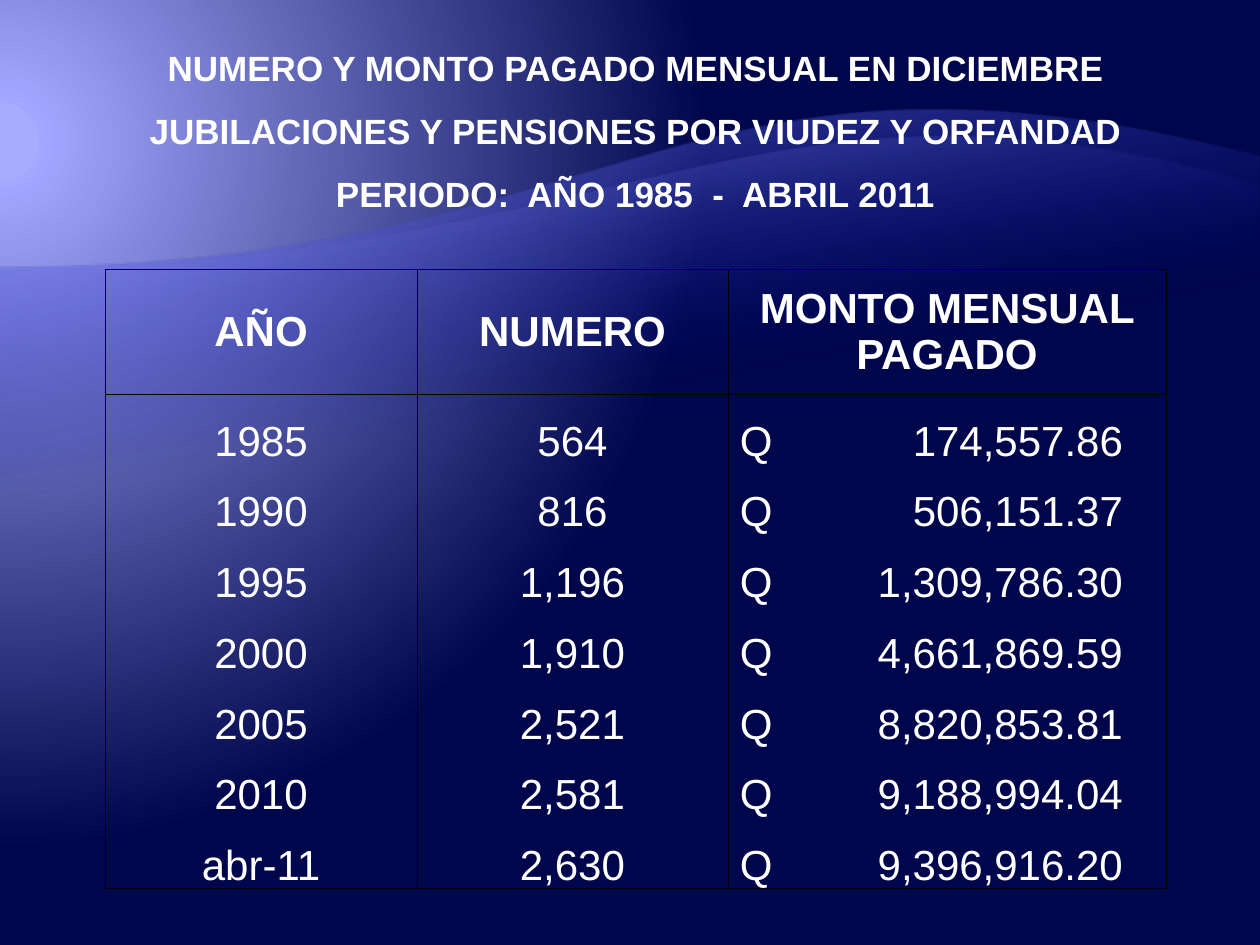
import dataclasses
import itertools
import typing

import lxml.etree
import pptx
import pptx.dml.color
import pptx.enum.text
import pptx.oxml
import pptx.oxml.ns
import pptx.util

PX = 914400 / 126
WIDTH, HEIGHT = 1260, 945
NO_STYLE = "{2D5ABB26-0587-4C30-8999-92F81FD0307C}"
ANCHOR = pptx.enum.text.MSO_ANCHOR
ALIGN = pptx.enum.text.PP_ALIGN
qn = pptx.oxml.ns.qn


@dataclasses.dataclass(frozen=True)
class Stop:
    position: int
    color: str
    alpha: int = 100


@dataclasses.dataclass(frozen=True)
class Wave:
    bottom: int
    left_y: int
    right_y: int
    control: tuple[int, int]
    stops: tuple[Stop, ...]


@dataclasses.dataclass(frozen=True)
class CellFormat:
    size: int
    bold: bool
    anchor: typing.Any = ANCHOR.BOTTOM
    align: typing.Any = ALIGN.CENTER
    inset: int = 1


TITLE = CellFormat(20, True)
HEADER = CellFormat(24, True, ANCHOR.MIDDLE)
FIGURE = CellFormat(24, False)
AMOUNT = CellFormat(24, False, align=ALIGN.LEFT, inset=12)
AMOUNT_TAB = 383

WAVES = (
    Wave(924, 268, 157, (673, 6), (Stop(65, "000D9E", 0), Stop(100, "797FFF", 55))),
    Wave(803, 268, 185, (753, 39), (Stop(65, "000D9E", 0), Stop(100, "A3A7FF", 30))),
)
TITLES = (
    "NUMERO Y MONTO PAGADO MENSUAL EN DICIEMBRE",
    "JUBILACIONES Y PENSIONES POR VIUDEZ Y ORFANDAD",
    "PERIODO:  AÑO 1985  -  ABRIL 2011",
)
HEADERS = ("AÑO", "NUMERO", "MONTO MENSUAL PAGADO")
PAYMENTS = (
    ("1985", "564", "174,557.86"),
    ("1990", "816", "506,151.37"),
    ("1995", "1,196", "1,309,786.30"),
    ("2000", "1,910", "4,661,869.59"),
    ("2005", "2,521", "8,820,853.81"),
    ("2010", "2,581", "9,188,994.04"),
    ("abr-11", "2,630", "9,396,916.20"),
)
COLUMNS = (312, 311, 438)
SPACER_ROW = len(TITLES)
HEADER_ROW = SPACER_ROW + 1
FIRST_ROW = HEADER_ROW + 1
LAST_ROW = HEADER_ROW + len(PAYMENTS)
PAYMENTS_HEIGHT = 495


def emu(px: int) -> int:
    return round(px * PX)


def rgb(color: str) -> pptx.dml.color.RGBColor:
    return pptx.dml.color.RGBColor.from_string(color)


def apply(target: typing.Any, values: dict[str, typing.Any]) -> None:
    for name, value in values.items():
        setattr(target, name, value)


def gradient(stops: tuple[Stop, ...], direction: str) -> typing.Any:
    stop_xml = "".join(
        f'<a:gs pos="{s.position * 1000}"><a:srgbClr val="{s.color}">'
        f'<a:alpha val="{s.alpha * 1000}"/></a:srgbClr></a:gs>'
        for s in stops
    )
    return pptx.oxml.parse_xml(
        f'<a:gradFill {pptx.oxml.ns.nsdecls("a")} rotWithShape="1">'
        f"<a:gsLst>{stop_xml}</a:gsLst>{direction}</a:gradFill>"
    )


def replace_fill(properties: typing.Any, fill: typing.Any) -> None:
    solid = properties.find(qn("a:solidFill"))
    properties.replace(solid, fill)


def paint_background(slide: typing.Any) -> None:
    slide.background.fill.solid()
    stops = (Stop(5, "A8ACFF"), Stop(5, "A3A7FF"), Stop(90, "00064B"))
    focus = (
        '<a:path path="circle">'
        '<a:fillToRect l="20000" t="30000" r="135000" b="100000"/></a:path>'
    )
    replace_fill(next(slide.element.iter(qn("p:bgPr"))), gradient(stops, focus))


def draw_wave(slide: typing.Any, wave: Wave) -> None:
    builder = slide.shapes.build_freeform(WIDTH, wave.bottom, scale=PX)
    builder.add_line_segments(
        [(0, wave.bottom), (0, wave.left_y), (WIDTH, wave.right_y)], close=True
    )
    shape = builder.convert_to_shape()
    shape.shadow.inherit = False
    shape.line.fill.background()
    shape.fill.solid()
    properties = shape.element.spPr
    crest = list(properties.iter(qn("a:lnTo")))[-1]
    curve = lxml.etree.Element(qn("a:cubicBezTo"))
    for x, y in ((WIDTH // 2, wave.left_y), wave.control, (WIDTH, wave.right_y)):
        lxml.etree.SubElement(
            curve, qn("a:pt"), x=str(x), y=str(y - wave.right_y)
        )
    crest.getparent().replace(crest, curve)
    replace_fill(properties, gradient(wave.stops, '<a:lin ang="15600000" scaled="0"/>'))


def border_cell(cell: typing.Any, sides: str) -> None:
    properties = cell._tc.get_or_add_tcPr()
    for index, side in enumerate("LRTB"):
        line = lxml.etree.Element(qn(f"a:ln{side}"), w=str(pptx.util.Pt(0.5)))
        if side in sides:
            fill = lxml.etree.SubElement(line, qn("a:solidFill"))
            lxml.etree.SubElement(fill, qn("a:srgbClr"), val="000000")
        else:
            lxml.etree.SubElement(line, qn("a:noFill"))
        properties.insert(index, line)


def row_sides(row: int) -> str:
    if row < SPACER_ROW:
        return ""
    if row == SPACER_ROW:
        return "B"
    top = "T" if row in (HEADER_ROW, FIRST_ROW) else ""
    bottom = "B" if row in (HEADER_ROW, LAST_ROW) else ""
    return "LR" + top + bottom


def write_cell(cell: typing.Any, text: str, style: CellFormat) -> None:
    apply(cell, {
        "margin_left": emu(style.inset), "margin_right": emu(1),
        "margin_top": emu(1), "margin_bottom": 0, "vertical_anchor": style.anchor,
    })
    paragraph = cell.text_frame.paragraphs[0]
    paragraph.alignment = style.align
    run = paragraph.add_run()
    run.text = text
    apply(run.font, {
        "name": "Arial", "size": pptx.util.Pt(style.size), "bold": style.bold,
    })
    run.font.color.rgb = rgb("FFFFFF")
    if style is AMOUNT:
        tabs = lxml.etree.SubElement(paragraph._p.get_or_add_pPr(), qn("a:tabLst"))
        lxml.etree.SubElement(tabs, qn("a:tab"), pos=str(emu(AMOUNT_TAB)), algn="r")


def add_payments_table(slide: typing.Any) -> None:
    count = len(PAYMENTS)
    edges = [round(PAYMENTS_HEIGHT * i / count) for i in range(count + 1)]
    heights = [63] * len(TITLES) + [54, 125]
    heights += [low - high for high, low in itertools.pairwise(edges)]
    frame = slide.shapes.add_table(
        len(heights), len(COLUMNS),
        emu(105), emu(26), emu(sum(COLUMNS)), emu(sum(heights)),
    )
    table = frame.table
    apply(table, {"first_row": False, "horz_banding": False})
    next(frame.element.iter(qn("a:tableStyleId"))).text = NO_STYLE
    for column, width in zip(table.columns, COLUMNS):
        column.width = emu(width)
    for index, height in enumerate(heights):
        table.rows[index].height = emu(height)
        for cell in table.rows[index].cells:
            cell.fill.background()
            border_cell(cell, row_sides(index))
    for index, title in enumerate(TITLES):
        table.cell(index, 0).merge(table.cell(index, len(COLUMNS) - 1))
        write_cell(table.cell(index, 0), title, TITLE)
    for column, header in enumerate(HEADERS):
        write_cell(table.cell(HEADER_ROW, column), header, HEADER)
    for row, (year, number, amount) in enumerate(PAYMENTS, FIRST_ROW):
        write_cell(table.cell(row, 0), year, FIGURE)
        write_cell(table.cell(row, 1), number, FIGURE)
        write_cell(table.cell(row, 2), f"Q\t{amount}", AMOUNT)


def main() -> None:
    deck = pptx.Presentation()
    apply(deck, {"slide_width": emu(WIDTH), "slide_height": emu(HEIGHT)})
    slide = deck.slides.add_slide(deck.slide_layouts[6])
    paint_background(slide)
    for wave in WAVES:
        draw_wave(slide, wave)
    add_payments_table(slide)
    deck.save("out.pptx")


if __name__ == "__main__":
    main()
